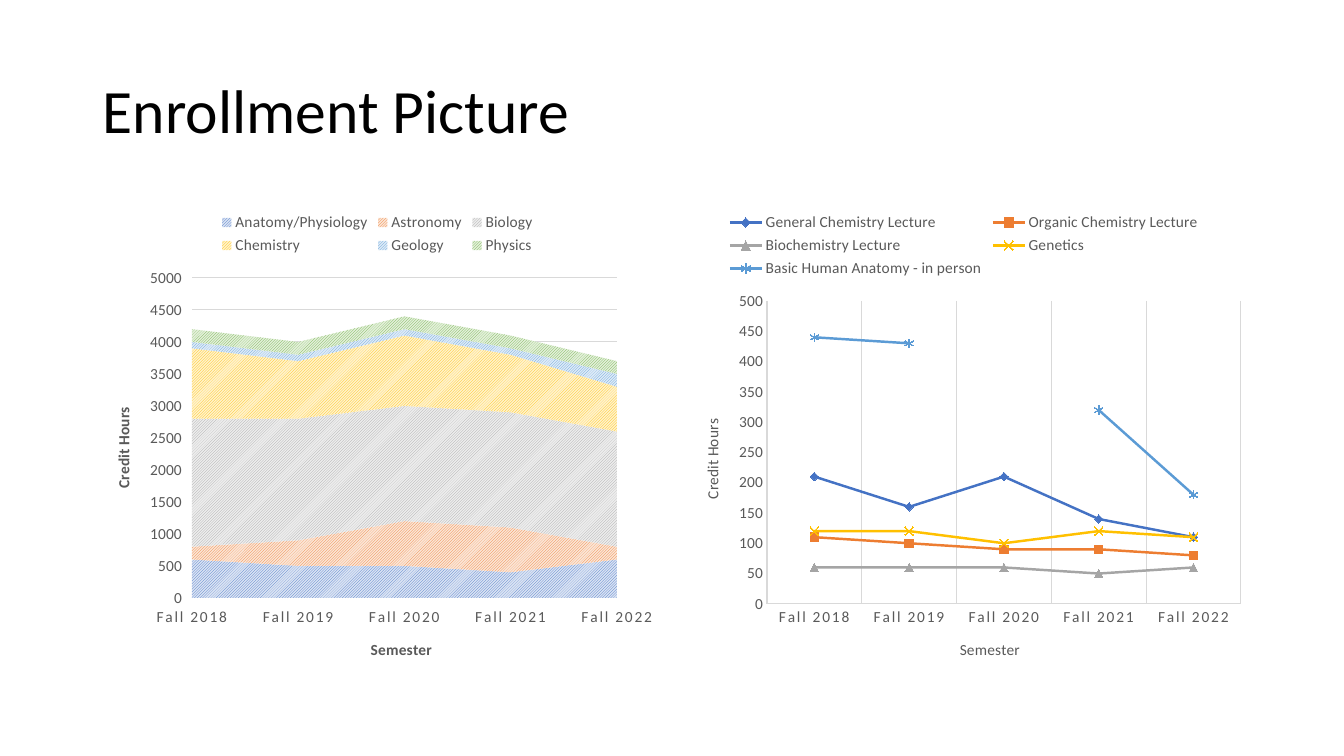
from lxml import etree
from pptx import Presentation
from pptx import util as u
from pptx.chart import data
from pptx.dml import color
from pptx.enum import chart as kinds, dml, text
from pptx.oxml import ns

SEMESTERS = ["Fall 2018", "Fall 2019", "Fall 2020", "Fall 2021", "Fall 2022"]
DEPARTMENTS = [
    ("Anatomy/Physiology", [600, 500, 500, 400, 600], "4472C4", "DAE3F3"),
    ("Astronomy", [200, 400, 700, 700, 200], "ED7D31", "FBE5D6"),
    ("Biology", [2000, 1900, 1800, 1800, 1800], "A5A5A5", "EDEDED"),
    ("Chemistry", [1100, 900, 1100, 900, 700], "FFC000", "FFF2CC"),
    ("Geology", [100, 100, 100, 100, 200], "5B9BD5", "DEEBF7"),
    ("Physics", [200, 200, 200, 200, 200], "70AD47", "E2F0D9"),
]
COURSES = [
    ("General Chemistry Lecture", [210, 160, 210, 140, 110], "4472C4", "DIAMOND"),
    ("Organic Chemistry Lecture", [110, 100, 90, 90, 80], "ED7D31", "SQUARE"),
    ("Biochemistry Lecture", [60, 60, 60, 50, 60], "A5A5A5", "TRIANGLE"),
    ("Genetics", [120, 120, 100, 120, 110], "FFC000", "X"),
    ("Basic Human Anatomy - in person", [440, 430, None, 320, 180], "5B9BD5", "STAR"),
]


def px(length):
    return u.Emu(round(length * 914400 / 100.8))


def rgb(value):
    return color.RGBColor.from_string(value)


class Slide:
    font = "Calibri"
    ink = "000000"
    gray = "595959"
    rule = "D9D9D9"

    def __init__(self, deck):
        self.page = deck.slides.add_slide(deck.slide_layouts[6])

    def style(self, font, size, value, bold=False):
        font.name = self.font
        font.size = u.Pt(size)
        font.bold = bold
        font.color.rgb = rgb(value)

    def line(self, line, value, width):
        line.color.rgb = rgb(value)
        line.width = u.Pt(width)

    def title(self, words, left, top, width, height):
        box = self.page.shapes.add_textbox(px(left), px(top), px(width), px(height))
        frame = box.text_frame
        frame.word_wrap = True
        frame.vertical_anchor = text.MSO_ANCHOR.MIDDLE
        para = frame.paragraphs[0]
        para.line_spacing = 0.9
        span = para.add_run()
        span.text = words
        self.style(span.font, 44, self.ink)

    def arrange(self, parent, index, frame, area, inner=False):
        for old in parent.findall(ns.qn("c:layout")):
            parent.remove(old)
        layout = etree.Element(ns.qn("c:layout"))
        manual = etree.SubElement(layout, ns.qn("c:manualLayout"))
        settings = [("layoutTarget", "inner")] if inner else []
        settings += [("xMode", "edge"), ("yMode", "edge")]
        left, top, width, height = frame
        settings += [("x", (area[0] - left) / width), ("y", (area[1] - top) / height)]
        if len(area) == 4:
            settings += [("w", area[2] / width), ("h", area[3] / height)]
        for name, value in settings:
            etree.SubElement(manual, ns.qn("c:" + name)).set("val", str(value))
        parent.insert(index, layout)

    def axis(self, axis, words, bold, tick):
        axis.major_tick_mark = tick
        axis.minor_tick_mark = kinds.XL_TICK_MARK.NONE
        self.style(axis.tick_labels.font, 11, self.gray)
        span = axis.axis_title.text_frame.paragraphs[0].add_run()
        span.text = words
        self.style(span.font, 11, self.gray, bold)

    def chart(self, kind, rows, frame, plot, legend, titles, maximum, step, bold, tick):
        table = data.CategoryChartData()
        table.categories = SEMESTERS
        for name, values, *_ in rows:
            table.add_series(name, values)
        chart = self.page.shapes.add_chart(kind, *map(px, frame), table).chart
        chart.has_title = False
        self.style(chart.font, 11, self.ink)
        chart.has_legend = True
        chart.legend.position = kinds.XL_LEGEND_POSITION.TOP
        chart.legend.include_in_layout = False
        self.style(chart.legend.font, 11, self.gray)
        self.axis(chart.category_axis, "Semester", bold, tick)
        self.axis(chart.value_axis, "Credit Hours", bold, tick)
        root = chart.element
        labels = root.find(".//" + ns.qn("c:catAx") + "/" + ns.qn("c:txPr"))
        labels.find(".//" + ns.qn("a:defRPr")).set("spc", "120")
        turned = chart.value_axis.axis_title.element.find(".//" + ns.qn("a:bodyPr"))
        turned.set("rot", "-5400000")
        turned.set("vert", "horz")
        chart.value_axis.minimum_scale = 0
        chart.value_axis.maximum_scale = maximum
        chart.value_axis.major_unit = step
        self.arrange(root.find(".//" + ns.qn("c:plotArea")), 0, frame, plot, True)
        self.arrange(root.find(".//" + ns.qn("c:legend")), 1, frame, legend)
        for axis, spot in zip((chart.category_axis, chart.value_axis), titles):
            self.arrange(axis.axis_title.element, 1, frame, spot)
        return chart

    def department_chart(self, *places):
        chart = self.chart(kinds.XL_CHART_TYPE.AREA_STACKED, DEPARTMENTS, *places,
                           5000, 500, True, kinds.XL_TICK_MARK.OUTSIDE)
        for axis in (chart.category_axis, chart.value_axis):
            axis.format.line.fill.background()
        chart.category_axis.has_major_gridlines = False
        self.line(chart.value_axis.major_gridlines.format.line, self.rule, 0.75)
        for series, (_, _, front, back) in zip(chart.plots[0].series, DEPARTMENTS):
            fill = series.format.fill
            fill.patterned()
            fill.pattern = dml.MSO_PATTERN.LIGHT_UPWARD_DIAGONAL
            fill.fore_color.rgb = rgb(front)
            fill.back_color.rgb = rgb(back)
            series.format.line.fill.background()

    def course_chart(self, *places):
        chart = self.chart(kinds.XL_CHART_TYPE.LINE_MARKERS, COURSES, *places,
                           500, 50, False, kinds.XL_TICK_MARK.NONE)
        chart.value_axis.has_major_gridlines = False
        for part in (chart.category_axis, chart.value_axis, chart.category_axis.major_gridlines):
            self.line(part.format.line, self.rule, 0.75)
        for series, (_, _, value, symbol) in zip(chart.plots[0].series, COURSES):
            series.smooth = False
            self.line(series.format.line, value, 1.75)
            marker = series.marker
            marker.style = kinds.XL_MARKER_STYLE[symbol]
            marker.size = 6
            self.line(marker.format.line, value, 0.75)
            if symbol in ("X", "STAR"):
                marker.format.fill.background()
            else:
                marker.format.fill.solid()
                marker.format.fill.fore_color.rgb = rgb(value)


def main():
    deck = Presentation()
    deck.slide_width = px(1344)
    deck.slide_height = px(756)
    slide = Slide(deck)
    slide.title("Enrollment Picture", 93, 41, 1159, 146)
    slide.department_chart((93, 202, 571, 480), (192, 278, 425, 320),
                           (217, 209, 321, 50), ((368, 636), (110, 404)))
    slide.course_chart((680, 202, 571, 480), (767, 301, 474, 303),
                       (724, 209, 480, 73), ((957, 636), (699, 416)))
    deck.save("out.pptx")


if __name__ == "__main__":
    main()
